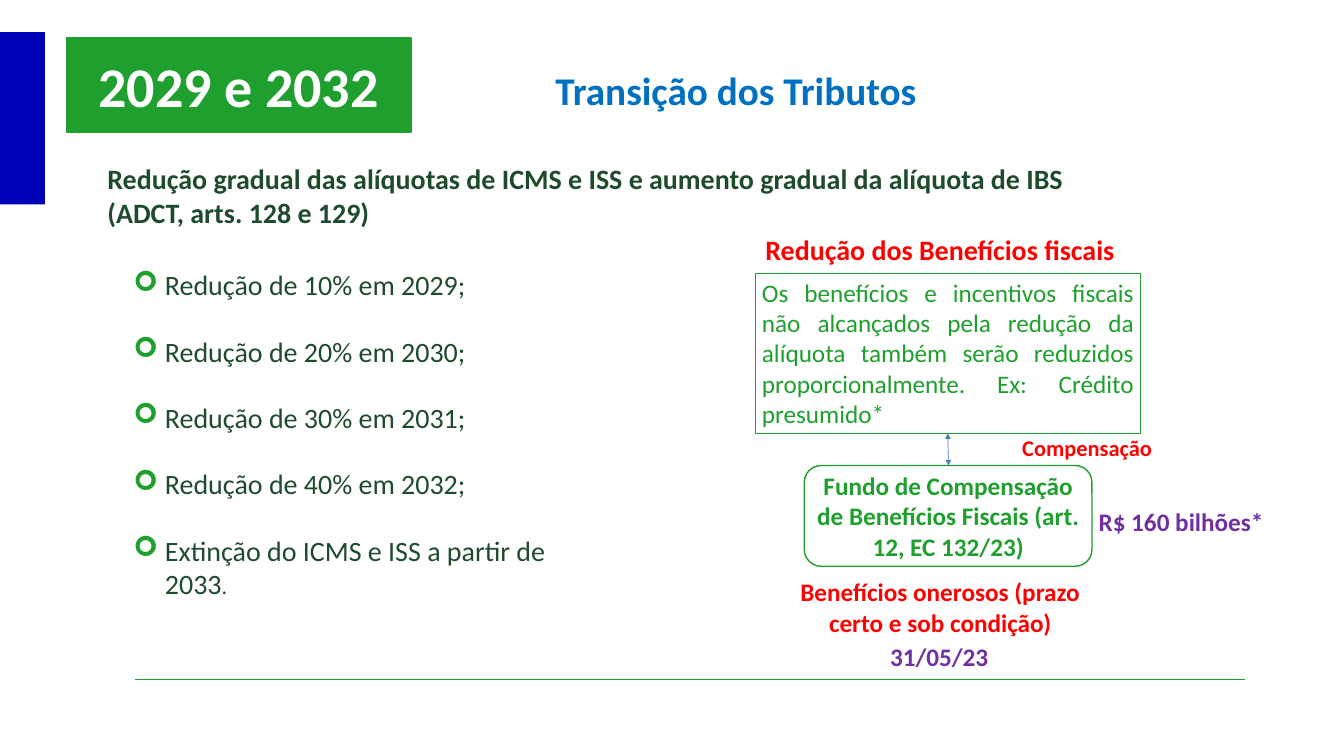
from lxml import etree
from pptx import Presentation
from pptx.dml.color import RGBColor
from pptx.enum.shapes import MSO_CONNECTOR, MSO_SHAPE
from pptx.enum.text import MSO_ANCHOR, MSO_AUTO_SIZE, PP_ALIGN
from pptx.oxml.ns import qn
from pptx.util import Pt

PX = 9525
FONT = "Calibri"
GREEN = RGBColor(0x1F, 0x9F, 0x2D)
DARK_GREEN = RGBColor(0x1F, 0x4B, 0x2D)
BLUE = RGBColor(0x00, 0x70, 0xC0)
NAVY = RGBColor(0x00, 0x00, 0xB7)
ARROW_BLUE = RGBColor(0x4B, 0x7E, 0xBC)
RED = RGBColor(0xFF, 0x00, 0x00)
PURPLE = RGBColor(0x70, 0x30, 0xA0)
WHITE = RGBColor(0xFF, 0xFF, 0xFF)

LEFT, CENTER, JUSTIFY = PP_ALIGN.LEFT, PP_ALIGN.CENTER, PP_ALIGN.JUSTIFY
TOP, MIDDLE = MSO_ANCHOR.TOP, MSO_ANCHOR.MIDDLE
NO_AUTOFIT = MSO_AUTO_SIZE.NONE
RECT, ROUNDED = MSO_SHAPE.RECTANGLE, MSO_SHAPE.ROUNDED_RECTANGLE
STRAIGHT = MSO_CONNECTOR.STRAIGHT

REDUCTIONS = [
    "Redução de 10% em 2029;",
    "Redução de 20% em 2030;",
    "Redução de 30% em 2031;",
    "Redução de 40% em 2032;",
    "Extinção do ICMS e ISS a partir de 2033",
]


def px(*values):
    return [v * PX for v in values]


def place(sp, box):
    sp.left, sp.top, sp.width, sp.height = px(*box)


def format_run(r, size, color, bold):
    r.font.name = FONT
    r.font.size = Pt(size)
    r.font.bold = bold
    r.font.color.rgb = color


def write(sp, text, size, color, bold=True, align=LEFT, anchor=TOP):
    tf = sp.text_frame
    tf.word_wrap = True
    tf.auto_size = NO_AUTOFIT
    tf.vertical_anchor = anchor
    tf.text = text
    for p in tf.paragraphs:
        p.alignment = align
        for r in p.runs:
            format_run(r, size, color, bold)


def add_label(slide, box, text, size, color, align=LEFT):
    sp = slide.shapes.add_textbox(*px(*box))
    write(sp, text, size, color, align=align)


def add_box(slide, kind, box, fill=None, line=None, width=0.75):
    sp = slide.shapes.add_shape(kind, *px(*box))
    sp.shadow.inherit = False
    if fill is None:
        sp.fill.background()
    else:
        sp.fill.solid()
        sp.fill.fore_color.rgb = fill
    if line is None:
        sp.line.fill.background()
    else:
        sp.line.color.rgb = line
        sp.line.width = Pt(width)
    return sp


def add_line(slide, ends, color, arrows=False):
    cx = slide.shapes.add_connector(STRAIGHT, *px(*ends))
    cx.line.color.rgb = color
    cx.line.width = Pt(0.75)
    if arrows:
        ln = cx.line._get_or_add_ln()
        for end in ("a:headEnd", "a:tailEnd"):
            etree.SubElement(ln, qn(end), type="triangle")
    etree.SubElement(cx._element.spPr, qn("a:effectLst"))


def add_bullet(p, char, color):
    """Give the paragraph a hanging, coloured bullet."""
    pPr = p._p.get_or_add_pPr()
    pPr.set("marL", str(45 * PX))
    pPr.set("indent", str(-45 * PX))
    buClr = etree.SubElement(pPr, qn("a:buClr"))
    etree.SubElement(buClr, qn("a:srgbClr"), val=str(color))
    etree.SubElement(pPr, qn("a:buFont"), typeface="Wingdings")
    etree.SubElement(pPr, qn("a:buChar"), char=char)


def fill_reductions(body):
    place(body, (181, 378, 657, 533))
    write(body, "\n".join(REDUCTIONS), 30, DARK_GREEN, bold=False)
    for p in body.text_frame.paragraphs:
        p.space_before = Pt(0)
        p.space_after = Pt(35)
        add_bullet(p, "➢", GREEN)
    r = p.add_run()
    r.text = "."
    format_run(r, 24, DARK_GREEN, False)


def main():
    prs = Presentation()
    prs.slide_width, prs.slide_height = px(1920, 1080)
    slide = prs.slides.add_slide(prs.slide_layouts[1])
    title, body = slide.placeholders

    add_box(slide, RECT, (0, 46, 64, 246), fill=NAVY)
    add_line(slide, (193, 971, 1778, 971), GREEN)
    badge = add_box(slide, RECT, (95, 54, 492, 134), GREEN, GREEN, 2)
    write(badge, "2029 e 2032", 60, WHITE, align=CENTER, anchor=MIDDLE)

    place(title, (619, 90, 865, 78))
    write(title, "Transição dos Tributos", 42, BLUE, align=CENTER)
    add_label(slide, (144, 226, 1388, 107),
              "Redução gradual das alíquotas de ICMS e ISS e aumento gradual "
              "da alíquota de IBS (ADCT, arts. 128 e 129)", 30, DARK_GREEN)
    fill_reductions(body)

    add_label(slide, (1084, 328, 541, 59),
              "Redução dos Benefícios fiscais", 30, RED)
    benefits = add_box(slide, RECT, (1079, 391, 550, 228), line=GREEN)
    write(benefits,
          "Os benefícios e incentivos fiscais não alcançados pela redução da "
          "alíquota também serão reduzidos proporcionalmente. Ex: Crédito "
          "presumido*", 27, GREEN, bold=False, align=JUSTIFY)
    add_line(slide, (1354, 619, 1355, 665), ARROW_BLUE, arrows=True)
    add_label(slide, (1435, 616, 236, 48), "Compensação", 24, RED, CENTER)

    fund = add_box(slide, ROUNDED, (1149, 665, 411, 144), line=GREEN, width=1.5)
    write(fund, "Fundo de Compensação de Benefícios Fiscais (art. 12, EC 132/23)",
          27, GREEN, align=CENTER, anchor=MIDDLE)
    add_label(slide, (1560, 719, 321, 54), "R$ 160 bilhões*", 27, PURPLE)
    add_label(slide, (1100, 819, 486, 97),
              "Benefícios onerosos (prazo certo e sob condição)", 27, RED, CENTER)
    add_label(slide, (1262, 912, 321, 54), "31/05/23", 27, PURPLE)

    prs.save("out.pptx")


if __name__ == "__main__":
    main()
